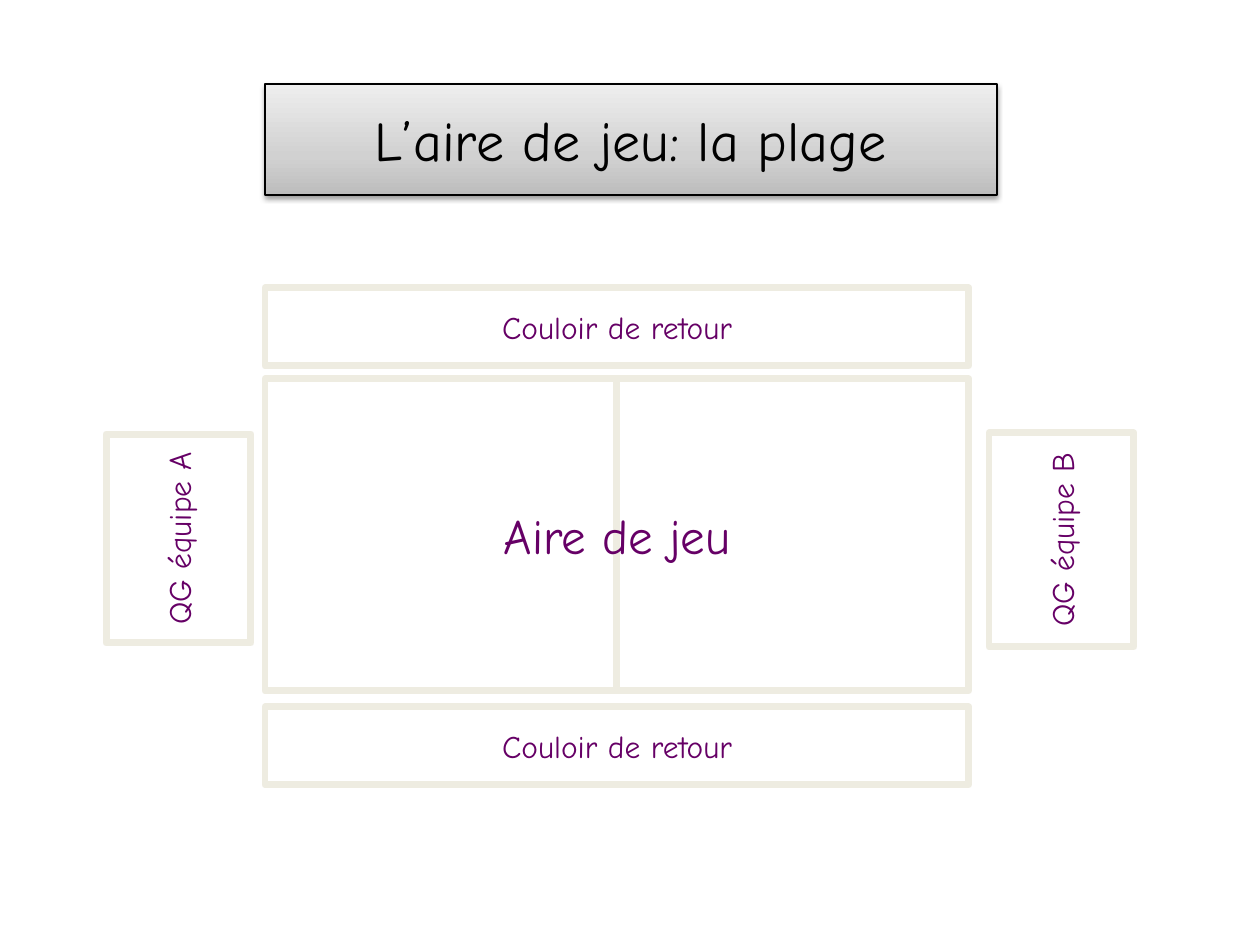
from pptx import Presentation
from pptx.dml.color import RGBColor
from pptx.enum.shapes import MSO_CONNECTOR, MSO_SHAPE
from pptx.enum.text import MSO_ANCHOR, PP_ALIGN
from pptx.oxml import parse_xml
from pptx.oxml.ns import nsdecls, qn
from pptx.util import Pt

PX = 914400 // 126
FONT = "Comic Neue"
SAND, PLUM, BLACK = "EEECE1", "660066", "000000"


def paint(line, color, width):
    line.color.rgb = RGBColor.from_string(color)
    line.width = Pt(width)


def box(text, area, size, ink, edge, width):
    shape = slide.shapes.add_shape(MSO_SHAPE.RECTANGLE, *[n * PX for n in area])
    shape.shadow.inherit = False
    shape.fill.background()
    paint(shape.line, edge, width)
    frame = shape.text_frame
    frame.text = text
    frame.word_wrap = True
    frame.vertical_anchor = MSO_ANCHOR.MIDDLE
    para = frame.paragraphs[0]
    para.alignment = PP_ALIGN.CENTER
    font = para.runs[0].font
    font.name = FONT
    font.size = Pt(size)
    font.color.rgb = RGBColor.from_string(ink)
    return shape


deck = Presentation()
deck.slide_width, deck.slide_height = 1260 * PX, 945 * PX
slide = deck.slides.add_slide(deck.slide_layouts[6])

# Centre line, behind the court
left, top, wide, high = 265, 379, 704, 312
mid = left + wide // 2
net = slide.shapes.add_connector(
    MSO_CONNECTOR.STRAIGHT, mid * PX, top * PX, mid * PX, (top + high) * PX)
paint(net.line, SAND, 4)
net._element.spPr.append(parse_xml(f"<a:effectLst {nsdecls('a')}/>"))

# Title with gradient and shadow
title = box("L’aire de jeu: la plage", (left, 84, 732, 111), 32, BLACK, BLACK, 0.75)
title.fill.gradient()
title.fill.gradient_angle = 90
props = title._element.spPr
stops = props.find(qn("a:gradFill")).find(qn("a:gsLst"))
for old in list(stops):
    stops.remove(old)
for pos, color in ((0, "BDBDBD"), (35, "D1D1D1"), (100, "EEEEEE")):
    stops.append(parse_xml(
        f'<a:gs {nsdecls("a")} pos="{pos * 1000}"><a:srgbClr val="{color}"/></a:gs>'))
props.find(qn("a:effectLst")).append(parse_xml(
    f'<a:outerShdw {nsdecls("a")} blurRad="{Pt(3.1)}" dist="{Pt(1.6)}" dir="5400000" '
    f'rotWithShape="0"><a:srgbClr val="{BLACK}"><a:alpha val="38000"/></a:srgbClr>'
    '</a:outerShdw>'))

# Court
court = box("Aire de jeu", (left, top, wide, high), 28, PLUM, SAND, 4)
net.begin_connect(court, 0)
net.end_connect(court, 2)

# Return lanes
for y in (288, 707):
    box("Couloir de retour", (left, y, wide, 78), 18, PLUM, SAND, 4)

# Team bases, text turned upwards
for team, x, y, tall in (("A", 106, 434, 209), ("B", 989, 433, 214)):
    base = box(f"QG équipe {team}", (x, y, 145, tall), 18, PLUM, SAND, 4)
    base.text_frame._txBody.bodyPr.set("vert", "vert270")

deck.save("out.pptx")
